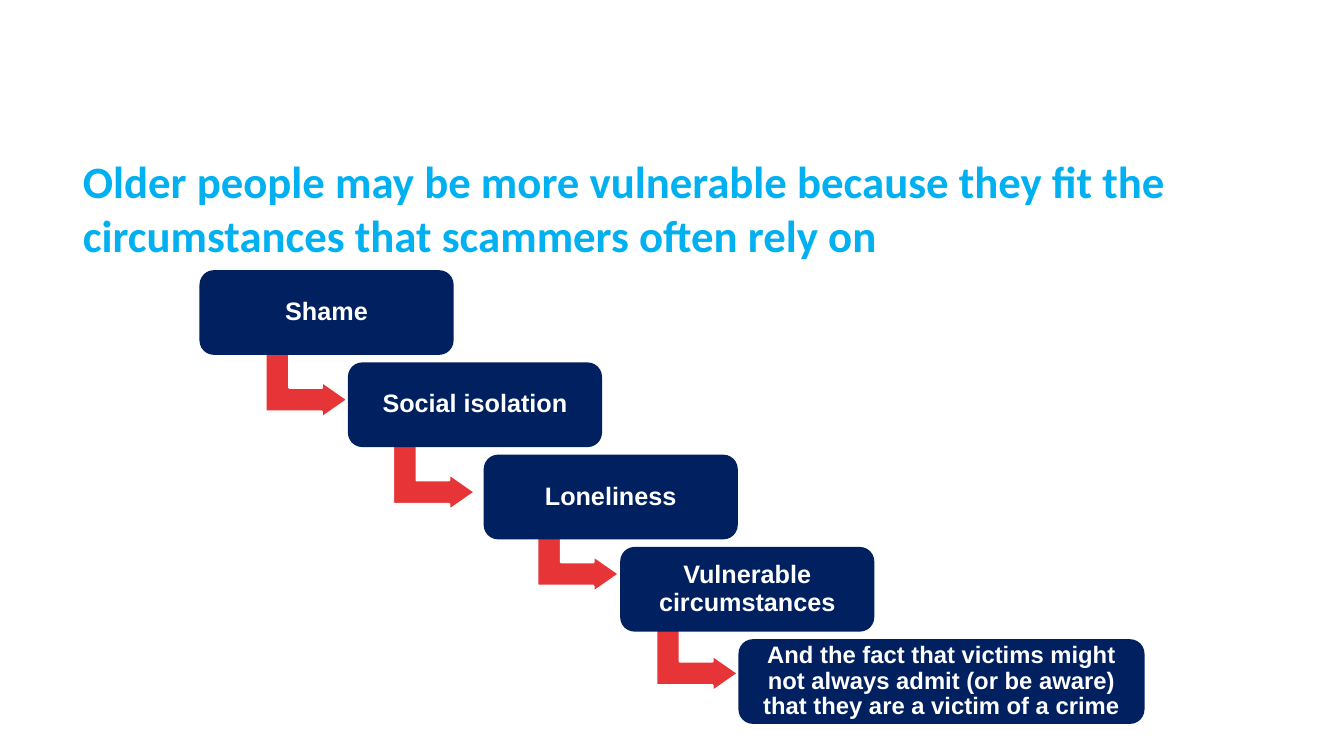
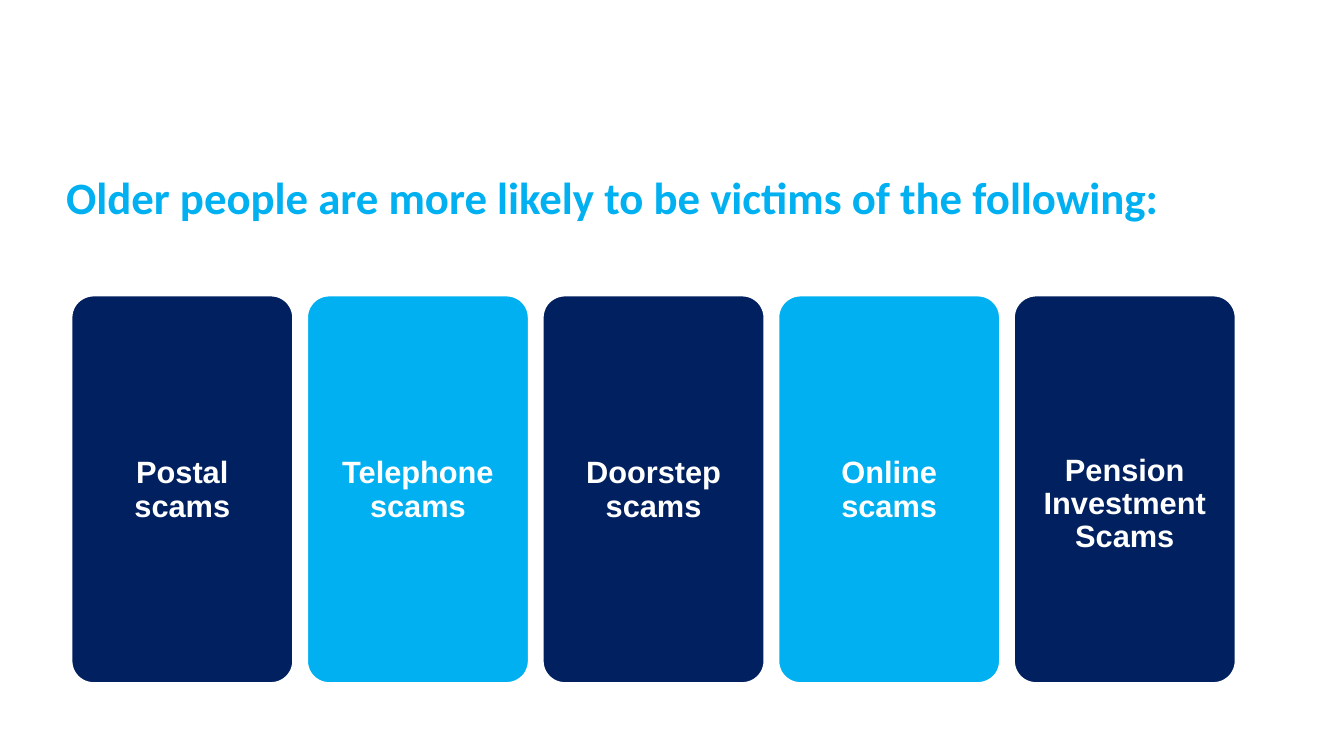
from pptx import Presentation
from pptx.dml.color import RGBColor
from pptx.enum.shapes import MSO_SHAPE as Shape
from pptx.enum.text import MSO_ANCHOR as Anchor, MSO_AUTO_SIZE as AutoSize, PP_ALIGN as Align
from pptx.util import Pt

NAVY, SKY, RED, WHITE = "002060", "00B0F0", "E73437", "FFFFFF"
TITLE_FONT, BODY_FONT = "Calibri", "Arial"


def rgb(hex_code):
    return RGBColor.from_string(hex_code)


class Deck:
    """Holds the shared style and the slide being built; lengths are in points."""

    def __init__(self):
        self.prs = Presentation()
        self.prs.slide_width, self.prs.slide_height = Pt(960), Pt(540)
        self.slide = None

    def add_slide(self, title, left, top, width, height):
        self.slide = self.prs.slides.add_slide(self.prs.slide_layouts[5])
        heading = self.slide.shapes.title
        heading.left, heading.top = Pt(left), Pt(top)
        heading.width, heading.height = Pt(width), Pt(height)
        heading.text_frame.text = title
        heading.text_frame.auto_size = AutoSize.NONE
        heading.text_frame.vertical_anchor = Anchor.TOP
        self.style_text(heading.text_frame.paragraphs[0], TITLE_FONT, 32, SKY, Align.LEFT)

    def style_text(self, paragraph, font_name, size, color, align):
        paragraph.alignment = align
        for run in paragraph.runs:
            run.font.name, run.font.size, run.font.bold = font_name, Pt(size), True
            run.font.color.rgb = rgb(color)

    def shape(self, kind, left, top, width, height, fill, adjustments, outlined):
        shape = self.slide.shapes.add_shape(kind, Pt(left), Pt(top), Pt(width), Pt(height))
        shape.shadow.inherit = False
        for index, value in enumerate(adjustments):
            shape.adjustments[index] = value
        shape.fill.solid()
        shape.fill.fore_color.rgb = rgb(fill)
        if outlined:
            shape.line.color.rgb = rgb(WHITE)
            shape.line.width = Pt(1.5)
        else:
            shape.line.fill.background()
        return shape

    def panel(self, text, left, top, width, height, fill, size, rounding,
              inset, outlined=False, text_drop=0):
        """Rounded box with centred text, lowered by text_drop."""
        panel = self.shape(Shape.ROUNDED_RECTANGLE, left, top, width, height,
                           fill, [rounding], outlined)
        frame = panel.text_frame
        frame.text = text
        frame.word_wrap = True
        frame.vertical_anchor = Anchor.MIDDLE
        frame.margin_left = frame.margin_right = frame.margin_bottom = Pt(inset)
        frame.margin_top = Pt(inset + 2 * text_drop)
        frame.paragraphs[0].line_spacing = 0.9
        self.style_text(frame.paragraphs[0], BODY_FONT, size, WHITE, Align.CENTER)

    def step_arrow(self, left, top):
        arrow = self.shape(Shape.BENT_UP_ARROW, left, top, 51, 58.5, RED,
                           [0.33, 0.25, 0.36], outlined=True)
        arrow.rotation = 90


def circumstances_slide(deck):
    deck.add_slide("Older people may be more vulnerable because they fit the "
                   "circumstances that scammers often rely on", 52, 106.5, 804, 85)
    for left, top in [(193.5, 243.5), (284.5, 309.5), (387.5, 368), (472.5, 439)]:
        deck.step_arrow(left, top)
    steps = [
        ("Shame", 142.5, 181.5, 18),
        ("Social isolation", 248.5, 181.5, 18),
        ("Loneliness", 345.5, 181.5, 18),
        ("Vulnerable circumstances", 443, 181.5, 18),
        ("And the fact that victims might not always admit (or be aware) "
         "that they are a victim of a crime", 527.5, 290, 17),
    ]
    for index, (text, left, width, size) in enumerate(steps):
        deck.panel(text, left, 193 + 65.9 * index, width, 60.5, NAVY, size,
                   rounding=0.17, inset=5)


def scam_types_slide(deck):
    deck.add_slide("Older people are more likely to be victims of the following:",
                   40, 117.5, 830, 46)
    scams = ["Postal scams", "Telephone scams", "Doorstep scams", "Online scams",
             "Pension Investment Scams"]
    for index, scam in enumerate(scams):
        deck.panel(scam, 51 + 168.3 * index, 211, 158.5, 277, (NAVY, SKY)[index % 2], 22,
                   rounding=0.1, inset=6.5, outlined=True,
                   text_drop=11 if scam == scams[-1] else 1)


def main():
    deck = Deck()
    circumstances_slide(deck)
    scam_types_slide(deck)
    deck.prs.save("out.pptx")


if __name__ == "__main__":
    main()
